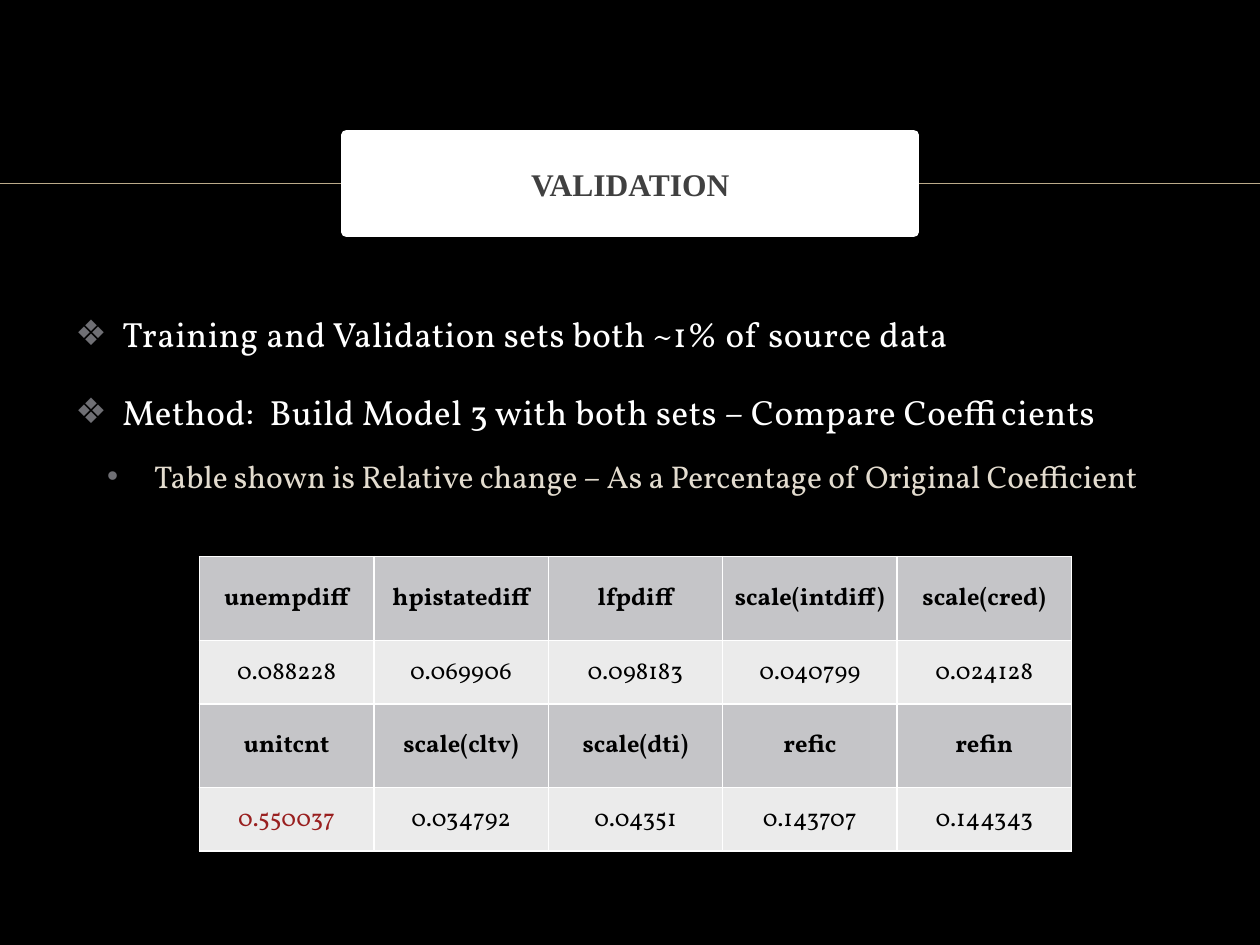
from lxml import etree
from pptx import Presentation
from pptx.dml.color import RGBColor
from pptx.enum.shapes import MSO_CONNECTOR, MSO_SHAPE
from pptx.enum.text import MSO_ANCHOR, PP_ALIGN
from pptx.oxml.ns import qn
from pptx.util import Cm, Pt

STRAIGHT = MSO_CONNECTOR.STRAIGHT
RECTANGLE = MSO_SHAPE.RECTANGLE
MIDDLE = MSO_ANCHOR.MIDDLE
CENTER = PP_ALIGN.CENTER

BLACK = RGBColor(0x00, 0x00, 0x00)
WHITE = RGBColor(0xFF, 0xFF, 0xFF)
TAN = RGBColor(0xBB, 0xAA, 0x8A)
CREAM = RGBColor(0xE3, 0xDC, 0xCF)
CHARCOAL = RGBColor(0x40, 0x40, 0x40)
BULLET_GRAY = RGBColor(0x6F, 0x6F, 0x74)
HEADER_GRAY = RGBColor(0xC5, 0xC5, 0xC8)
VALUE_GRAY = RGBColor(0xEB, 0xEB, 0xEB)
RED = RGBColor(0x99, 0x1F, 0x1F)


def add_span(para, text, color, **font_format):
    span = para.add_run()
    span.text = text
    span.font.color.rgb = color
    for name, value in font_format.items():
        setattr(span.font, name, value)
    return span


def add_solid_color(parent, tag, color):
    holder = etree.SubElement(parent, qn(tag))
    etree.SubElement(holder, qn("a:srgbClr"), val=str(color))


deck = Presentation()
deck.slide_width = Cm(25.4)
deck.slide_height = Cm(19.05)
page = deck.slides.add_slide(deck.slide_layouts[6])
page.background.fill.solid()
page.background.fill.fore_color.rgb = BLACK

# Rule running behind the title
rule = page.shapes.add_connector(STRAIGHT, Cm(0), Cm(3.7), Cm(25.4), Cm(3.7))
rule.line.color.rgb = TAN
rule.line.width = Pt(1)
etree.SubElement(rule._element.spPr, qn("a:effectLst"))

# Bulleted text
body = page.shapes.add_textbox(Cm(1.27), Cm(5.61), Cm(22.86), Cm(4.55))
body.text_frame.word_wrap = True
body.text_frame.vertical_anchor = MIDDLE
main_point = {"level": 0, "line_spacing": 1.6, "space_before": Pt(6)}
sub_point = {"level": 1, "line_spacing": 1.1, "space_before": Pt(12)}
points = [
    ("Training and Validation sets both ~1% of source data", main_point),
    ("Method:  Build Model 3 with both sets – Compare Coefficients", main_point),
    ("Table shown is Relative change – As a Percentage of Original Coefficient", sub_point),
]
# Bullet, left margin, size, colour and letter spacing (1/100 pt) per level
level_styles = [
    ("❖", Cm(0.95), Pt(20), WHITE, "30"),
    ("•", Cm(1.59), Pt(18), CREAM, "0"),
]
for index, (text, para_format) in enumerate(points):
    frame = body.text_frame
    para = frame.paragraphs[0] if index == 0 else frame.add_paragraph()
    for name, value in para_format.items():
        setattr(para, name, value)
    bullet, margin, size, color, spacing = level_styles[para.level]
    properties = para._p.get_or_add_pPr()
    properties.set("marL", str(margin))
    properties.set("indent", str(-Cm(0.95)))
    add_solid_color(properties, "a:buClr", BULLET_GRAY)
    etree.SubElement(properties, qn("a:buFont"), typeface="Arial")
    etree.SubElement(properties, qn("a:buChar"), char=bullet)
    span = add_span(para, text, color, size=size, name="Vollkorn")
    span.font._element.set("spc", spacing)

# Title box
title = page.shapes.add_shape(RECTANGLE, Cm(6.99), Cm(2.72), Cm(11.43), Cm(1.96))
title.shadow.inherit = False
title.fill.solid()
title.fill.fore_color.rgb = WHITE
title.line.color.rgb = WHITE
title.line.width = Pt(6)
title.text_frame.vertical_anchor = MIDDLE
para = title.text_frame.paragraphs[0]
para.alignment = CENTER
para.space_before = Pt(4)
add_span(para, "VALIDATION", CHARCOAL, size=Pt(18), name="Times New Roman", bold=True)

# Coefficient table: name rows alternate with value rows
rows = [
    ["unempdiff", "hpistatediff", "lfpdiff", "scale(intdiff)", "scale(cred)"],
    ["0.088228", "0.069906", "0.098183", "0.040799", "0.024128"],
    ["unitcnt", "scale(cltv)", "scale(dti)", "refic", "refin"],
    ["0.550037", "0.034792", "0.04351", "0.143707", "0.144343"],
]
table = page.shapes.add_table(4, 5, Cm(4.02), Cm(11.22), Cm(17.58), Cm(5.94)).table
for column in table.columns:
    column.width = Cm(3.516)
cell_format = {
    "vertical_anchor": MIDDLE,
    "margin_left": Cm(0.03),
    "margin_top": Cm(0.03),
    "margin_right": Cm(0.03),
    "margin_bottom": Cm(0),
}
for row_index, texts in enumerate(rows):
    is_header = row_index % 2 == 0
    table.rows[row_index].height = Cm(1.69) if is_header else Cm(1.28)
    for column_index, text in enumerate(texts):
        cell = table.cell(row_index, column_index)
        for name, value in cell_format.items():
            setattr(cell, name, value)
        cell_properties = cell._tc.get_or_add_tcPr()
        for side in ("a:lnL", "a:lnR", "a:lnT", "a:lnB"):
            border = etree.SubElement(cell_properties, qn(side), w=str(Pt(1)))
            add_solid_color(border, "a:solidFill", WHITE)
        cell.fill.solid()
        cell.fill.fore_color.rgb = HEADER_GRAY if is_header else VALUE_GRAY
        para = cell.text_frame.paragraphs[0]
        para.alignment = CENTER
        color = RED if text == "0.550037" else BLACK
        add_span(para, text, color, size=Pt(14), name="Vollkorn", bold=is_header)

deck.save("out.pptx")
